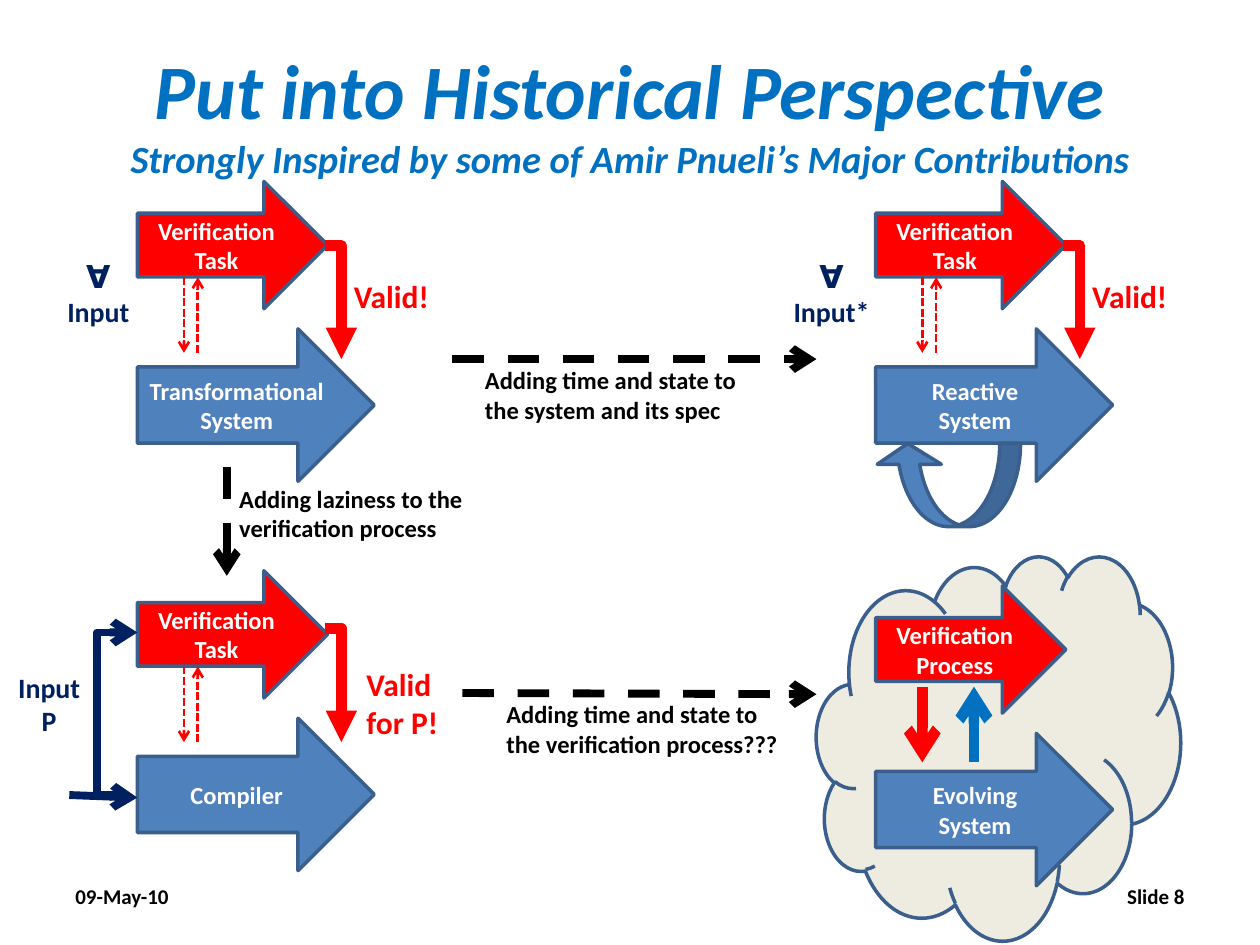
from lxml.etree import SubElement
from pptx import Presentation
from pptx.dml.color import RGBColor
from pptx.enum.dml import MSO_LINE
from pptx.enum.shapes import MSO_CONNECTOR, MSO_SHAPE
from pptx.enum.text import MSO_ANCHOR, PP_ALIGN
from pptx.oxml.ns import qn
from pptx.util import Emu, Pt

PX = 9144  # 100 px to the inch
FONT = "Calibri"
BLACK = RGBColor(0x00, 0x00, 0x00)
WHITE = RGBColor(0xFF, 0xFF, 0xFF)
RED = RGBColor(0xFF, 0x00, 0x00)
BLUE = RGBColor(0x00, 0x70, 0xC0)
NAVY = RGBColor(0x00, 0x20, 0x60)
STEEL = RGBColor(0x4F, 0x81, 0xBD)
OUTLINE = RGBColor(0x3A, 0x5F, 0x8C)
CREAM = RGBColor(0xEE, 0xEC, 0xE1)


def px(*values):
    return [Emu(v * PX) for v in values]


def write(sp, text, sizes, color, align=PP_ALIGN.LEFT, anchor=MSO_ANCHOR.TOP, italic=False):
    """Fill a shape with bold text; sizes go to the runs in turn, the last one repeating."""
    tf = sp.text_frame
    tf.word_wrap = True
    tf.vertical_anchor = anchor
    tf.text = text
    for p in tf.paragraphs:
        p.alignment = align
    runs = [r for p in tf.paragraphs for r in p.runs]
    for i, r in enumerate(runs):
        r.font.name = FONT
        r.font.size = Pt(sizes[min(i, len(sizes) - 1)])
        r.font.bold = True
        r.font.italic = italic
        r.font.color.rgb = color


def label(s, box, text, sizes, color, **layout):
    write(s.shapes.add_textbox(*px(*box)), text, sizes, color, **layout)


def block(s, kind, box, fill):
    sp = s.shapes.add_shape(kind, *px(*box))
    sp.shadow.inherit = False
    sp.fill.solid()
    sp.fill.fore_color.rgb = fill
    sp.line.color.rgb = OUTLINE
    sp.line.width = Pt(2)
    return sp


def block_arrow(s, box, fill, text):
    sp = block(s, MSO_SHAPE.RIGHT_ARROW, box, fill)
    write(sp, text, [14], WHITE, PP_ALIGN.CENTER, MSO_ANCHOR.MIDDLE)
    sp.text_frame.margin_left = sp.text_frame.margin_right = 0


def arrow(s, ends, color, width, dash=None, head="arrow", kind=MSO_CONNECTOR.STRAIGHT):
    cxn = s.shapes.add_connector(kind, *px(*ends))
    cxn.line.color.rgb = color
    cxn.line.width = Pt(width)
    if dash:
        cxn.line.dash_style = dash
    sp_pr = cxn._element.spPr
    SubElement(sp_pr.find(qn("a:ln")), qn("a:tailEnd"), type=head)
    SubElement(sp_pr, qn("a:effectLst"))
    return cxn


def heading(s, box):
    label(s, box,
          "Put into Historical Perspective\vStrongly Inspired by some of Amir Pnueli’s Major Contributions",
          [44, 22], BLUE, align=PP_ALIGN.CENTER, anchor=MSO_ANCHOR.MIDDLE, italic=True)


def footer(s, x, y, w):
    box_w = 233
    label(s, (x, y, box_w, 40), "09-May-10", [12], BLACK, anchor=MSO_ANCHOR.MIDDLE)
    label(s, (x + w - box_w, y, box_w, 40), "Slide 8", [12], BLACK,
          align=PP_ALIGN.RIGHT, anchor=MSO_ANCHOR.MIDDLE)


def stage(s, x, y, task, system):
    """A verification arrow above a system arrow."""
    block_arrow(s, (x, y + 117, 188, 121), STEEL, system)
    block_arrow(s, (x, y, 151, 101), RED, task)


def exchange(s, x, y, gap, up_color, width, dash=None):
    """A downward arrow and, one gap to the right, an upward one."""
    arrow(s, (x, y, x, y + 60), RED, width, dash)
    arrow(s, (x + gap, y + 60, x + gap, y), up_color, width, dash)


def verdict(s, x, y, text, label_box):
    """An elbow arrow going right and down, with its result beside it."""
    cxn = arrow(s, (x, y, x + 13, y + 90), RED, 6, head="triangle", kind=MSO_CONNECTOR.ELBOW)
    cxn._element.spPr.find(qn("a:prstGeom")).set("prst", "bentConnector2")
    dx, dy, w, h = label_box
    label(s, (x + dx, y + dy, w, h), text, [18], RED)


def transition(s, ends, label_dx, label_dy, text):
    x, y = ends[:2]
    arrow(s, ends, BLACK, 4.5, MSO_LINE.DASH)
    label(s, (x + label_dx, y + label_dy, 242, 57), text, [14], BLACK)


def feedback(s, box):
    sp = block(s, MSO_SHAPE.CURVED_UP_ARROW, box, STEEL)
    for i, value in enumerate((0.25, 0.77, 0.25)):
        sp.adjustments[i] = value
    sp._element.spPr.find(qn("a:xfrm")).set("flipH", "1")


def program_input(s, x, y):
    """Input P branching to the compiler and to its verification task."""
    label(s, (x, y + 25, 78, 64), "Input P", [16], NAVY, align=PP_ALIGN.CENTER)
    start, end, spine = x + 102, x + 109, x + 77
    cxn = arrow(s, (start, y + 129, end, y), NAVY, 4.5, kind=MSO_CONNECTOR.ELBOW)
    guides = cxn._element.spPr.find(qn("a:prstGeom")).find(qn("a:avLst"))
    bend = round(100000 * (spine - start) / (end - start))
    SubElement(guides, qn("a:gd"), name="adj1", fmla=f"val {bend}")
    arrow(s, (x + 55, y + 129, end, y + 131), NAVY, 4.5)


def main():
    prs = Presentation()
    prs.slide_width, prs.slide_height = px(1000, 750)
    s = prs.slides.add_slide(prs.slide_layouts[6])
    left, right, top, bottom = 109, 695, 144, 453

    block(s, MSO_SHAPE.CLOUD, (648, 441, 289, 305), CREAM)
    heading(s, (50, 26, 900, 125))
    footer(s, 50, 691, 900)

    checked = [(left, top, "Transformational\nSystem"),
               (right, top, "Reactive\nSystem"),
               (left, bottom, "Compiler")]
    for x, y, system in checked:
        stage(s, x, y, "Verification\nTask", system)
        exchange(s, x + 37, y + 76, 11, RED, 1.5, MSO_LINE.SQUARE_DOT)
    feedback(s, (right, 352, 115, 66))
    stage(s, right, 465, "Verification\nProcess", "Evolving\nSystem")
    exchange(s, right + 37, 545, 41, BLUE, 6)

    for x in (left, right):
        verdict(s, x + 149, top + 51, "Valid!", (13, 20, 102, 40))
    verdict(s, left + 149, bottom + 46, "Valid for P!", (23, 24, 91, 71))

    for x, w, name in ((39, 78, "Input"), (617, 86, "Input*")):
        label(s, (x, 199, w, 67), f"∀\n{name}", [18, 16], NAVY, align=PP_ALIGN.CENTER)
    program_input(s, 0, 502)

    transition(s, (359, 285, 648, 285), 16, 0, "Adding time and state to the system and its spec")
    transition(s, (367, 550, 648, 551), 25, 0, "Adding time and state to the verification process???")
    transition(s, (180, 371, 180, 457), 0, 8, "Adding laziness to the verification process")

    prs.save("out.pptx")


if __name__ == "__main__":
    main()
